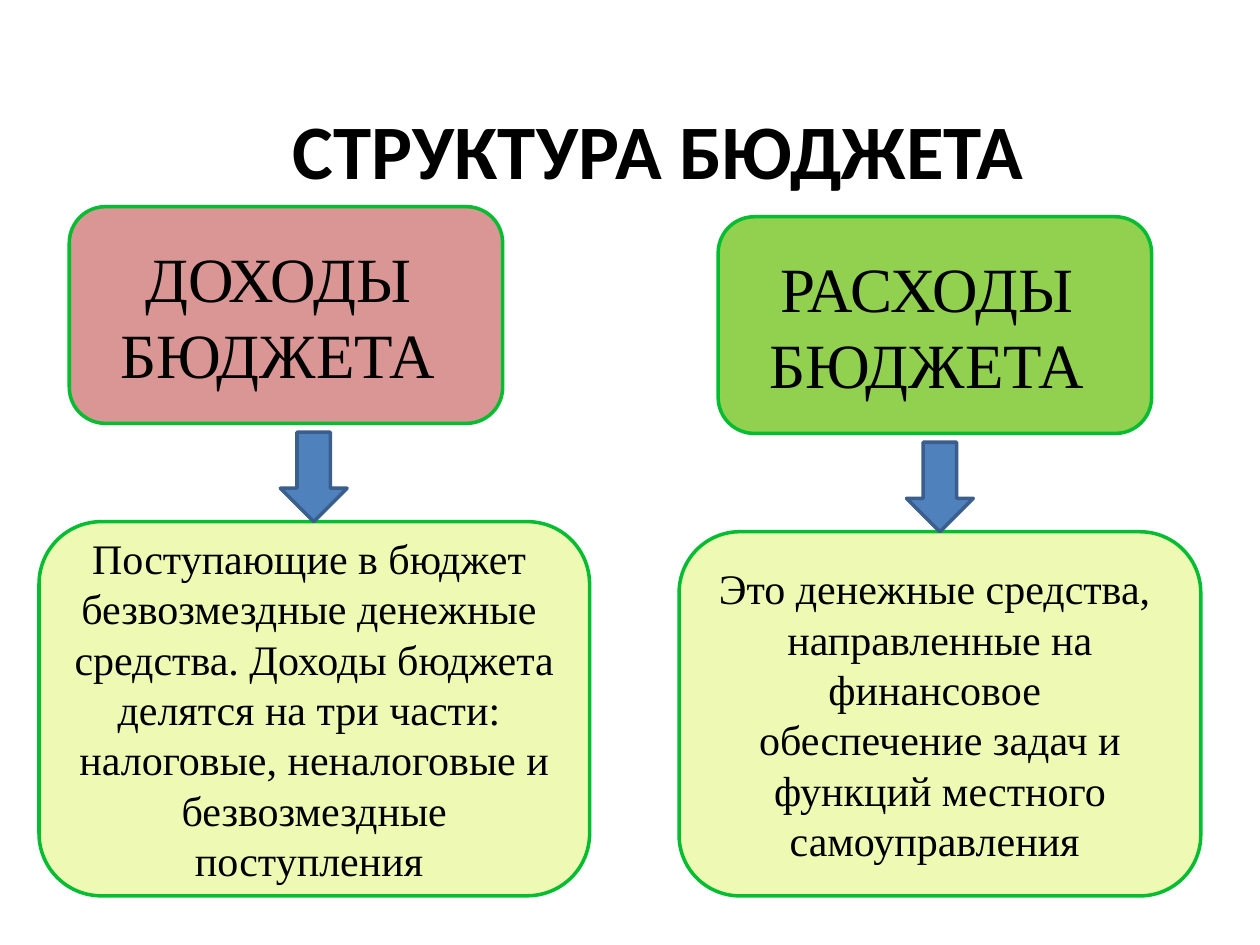
from dataclasses import dataclass

from pptx import Presentation
from pptx.dml.color import RGBColor
from pptx.enum.shapes import MSO_SHAPE
from pptx.enum.text import MSO_ANCHOR, PP_ALIGN
from pptx.util import Inches, Pt

ROUND = MSO_SHAPE.ROUNDED_RECTANGLE
DOWN = MSO_SHAPE.DOWN_ARROW
MIDDLE = MSO_ANCHOR.MIDDLE
CENTER = PP_ALIGN.CENTER


@dataclass(frozen=True)
class Theme:
    """Colours, fonts and type sizes of the slide."""
    ink: str = "000000"
    income: str = "D99694"
    spend: str = "92D050"
    note: str = "EEFAB4"
    edge: str = "05BD31"
    arrow: str = "4F81BD"
    rim: str = "3A5F8C"
    head: str = "Calibri"
    body: str = "Times New Roman"
    title: int = 44
    label: int = 36
    text: int = 24
    line: int = 2


THEME = Theme()


def set_all(item, values):
    """Set each attribute of item from a dict."""
    for name, value in values.items():
        setattr(item, name, value)


def write(frame, lines, font, size, bold=False):
    """Fill a text frame with centred paragraphs."""
    set_all(frame, {"word_wrap": True, "vertical_anchor": MIDDLE})
    for i, line in enumerate(lines):
        para = frame.add_paragraph() if i else frame.paragraphs[0]
        para.alignment = CENTER
        run = para.add_run()
        run.text = line
        set_all(run.font, {"name": font, "size": Pt(size), "bold": bold})
        run.font.color.rgb = RGBColor.from_string(THEME.ink)


def add_title(slide, text):
    """Place and format the title, nudged right by its left inset."""
    title = slide.shapes.title
    set_all(title, {"left": Inches(0.84), "top": Inches(0.64),
                    "width": Inches(7.97), "height": Inches(1.08)})
    write(title.text_frame, [text], THEME.head, THEME.title, True)
    title.text_frame.margin_left = Inches(0.9)


def add_form(slide, kind, area, fill, edge):
    """Draw a flat preset shape and return it."""
    form = slide.shapes.add_shape(kind, *map(Inches, area))
    form.shadow.inherit = False
    form.fill.solid()
    form.fill.fore_color.rgb = RGBColor.from_string(fill)
    form.line.color.rgb = RGBColor.from_string(edge)
    form.line.width = Pt(THEME.line)
    return form


def add_box(slide, area, fill, lines, size):
    """Draw a rounded box with text."""
    box = add_form(slide, ROUND, area, fill, THEME.edge)
    write(box.text_frame, lines, THEME.body, size)


def add_branch(slide, left, top, fill, label, note, width, lines):
    """Draw a label box, its note below and the arrow between them."""
    base, foot, shaft = top + 2.5, 7.11, 0.53
    start = left + (3.44 - width) / 2 + (0.22 if width > 4.2 else 0.04)
    add_box(slide, (left, top, 3.44, 1.72), fill, label, THEME.label)
    add_box(slide, (note, base, width, foot - base), THEME.note, lines,
            THEME.text)
    middle = start + width / 2
    add_form(slide, DOWN, (middle - shaft / 2, base - 0.71, shaft, 0.71),
             THEME.arrow, THEME.rim)


def main():
    """Build the slide and save it."""
    deck = Presentation()
    set_all(deck, {"slide_width": Inches(10), "slide_height": Inches(7.5)})
    slide = deck.slides.add_slide(deck.slide_layouts[5])
    add_title(slide, "СТРУКТУРА БЮДЖЕТА")
    add_branch(slide, 0.55, 1.64, THEME.income, ["ДОХОДЫ ", "БЮДЖЕТА "],
               0.31, 4.37,
               ["Поступающие в бюджет ", "безвозмездные денежные ",
                "средства. Доходы бюджета ", "делятся на три части: ",
                "налоговые, неналоговые и безвозмездные поступления "])
    add_branch(slide, 5.7, 1.72, THEME.spend, ["РАСХОДЫ ", "БЮДЖЕТА "],
               5.39, 4.14,
               ["Это денежные средства, ", "направленные на финансовое ",
                "обеспечение задач и функций местного самоуправления "])
    deck.save("out.pptx")


if __name__ == "__main__":
    main()
